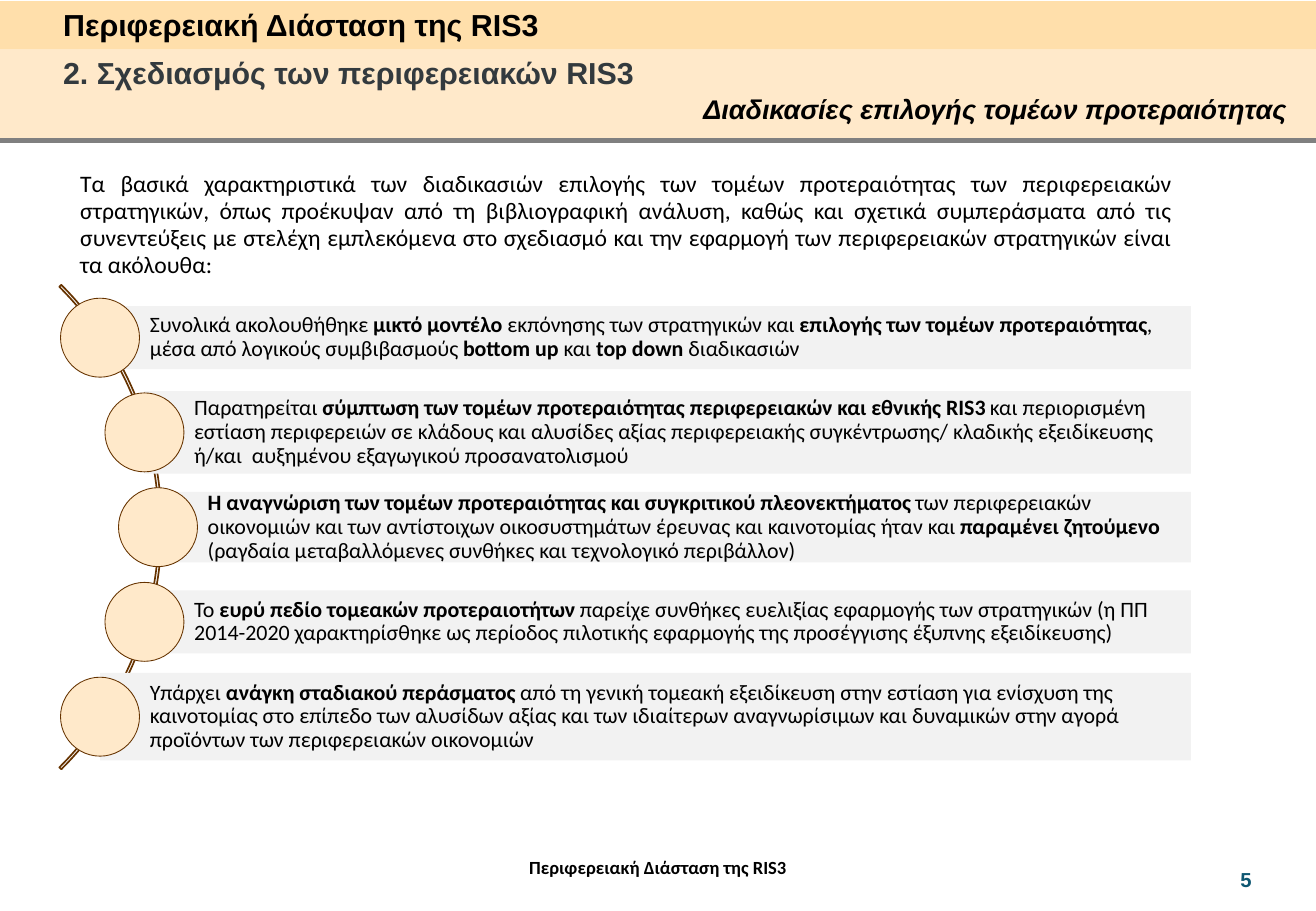
import math
from dataclasses import dataclass

import lxml.etree
import pptx
import pptx.dml.color
import pptx.enum.shapes
import pptx.enum.text
import pptx.oxml.ns
import pptx.util

Inches = pptx.util.Inches
SHAPE = pptx.enum.shapes.MSO_SHAPE
ALIGN = pptx.enum.text.PP_ALIGN
ANCHOR = pptx.enum.text.MSO_ANCHOR
qn = pptx.oxml.ns.qn

TITLE = "Περιφερειακή Διάσταση της RIS3"
SECTION = "2. Σχεδιασμός των περιφερειακών RIS3"
TOPIC = "Διαδικασίες επιλογής τομέων προτεραιότητας"
NUMBER = "5"
INTRO = (
    "Τα βασικά χαρακτηριστικά των διαδικασιών επιλογής των τομέων προτεραιότητας των "
    "περιφερειακών στρατηγικών, όπως προέκυψαν από τη βιβλιογραφική ανάλυση, καθώς και "
    "σχετικά συμπεράσματα από τις συνεντεύξεις με στελέχη εμπλεκόμενα στο σχεδιασμό και "
    "την εφαρμογή των περιφερειακών στρατηγικών είναι τα ακόλουθα:"
)
FINDINGS = [
    (0.52, "Συνολικά ακολουθήθηκε *μικτό μοντέλο* εκπόνησης των στρατηγικών και "
           "*επιλογής των τομέων προτεραιότητας*, μέσα από λογικούς συμβιβασμούς "
           "*bottom up *και *top down *διαδικασιών"),
    (0.68, "Παρατηρείται *σύμπτωση των τομέων προτεραιότητας περιφερειακών και εθνικής "
           "RIS3 *και περιορισμένη εστίαση περιφερειών σε κλάδους και αλυσίδες αξίας "
           "περιφερειακής συγκέντρωσης/ κλαδικής εξειδίκευσης ή/και  αυξημένου "
           "εξαγωγικού προσανατολισμού"),
    (0.58, "*Η αναγνώριση των τομέων προτεραιότητας και συγκριτικού πλεονεκτήματος *των "
           "περιφερειακών οικονομιών και των αντίστοιχων οικοσυστημάτων έρευνας και "
           "καινοτομίας ήταν και *παραμένει ζητούμενο *(ραγδαία μεταβαλλόμενες συνθήκες "
           "και τεχνολογικό περιβάλλον)"),
    (0.52, "Το *ευρύ πεδίο τομεακών προτεραιοτήτων *παρείχε συνθήκες ευελιξίας εφαρμογής "
           "των στρατηγικών (η ΠΠ 2014-2020 χαρακτηρίσθηκε ως περίοδος πιλοτικής "
           "εφαρμογής της προσέγγισης έξυπνης εξειδίκευσης)"),
    (0.72, "Υπάρχει *ανάγκη σταδιακού περάσματος *από τη γενική τομεακή εξειδίκευση στην "
           "εστίαση για ενίσχυση της καινοτομίας στο επίπεδο των αλυσίδων αξίας και των "
           "ιδιαίτερων αναγνωρίσιμων και δυναμικών στην αγορά προϊόντων των "
           "περιφερειακών οικονομιών"),
]


@dataclass(frozen=True)
class Theme:
    heading: str = "Arial"
    body: str = "Calibri"
    black: str = "000000"
    slate: str = "333A3E"
    teal: str = "0E5772"
    amber: str = "FFDFAB"
    cream: str = "FFE9CA"
    grey: str = "808080"
    pale: str = "F2F2F2"
    brown: str = "663300"
    title_size: int = 18
    topic_size: int = 16
    intro_size: int = 14
    finding_size: int = 13
    number_size: int = 12
    footer_size: int = 11


T = Theme()
WIDTH, HEIGHT = 10.83, 7.5
RULE_Y = 1.16
ARC_X, ARC_Y, ARC_RADIUS = -1.49, 4.34, 2.82
NODE_RADIUS, NODE_SIZE, NODE_STEP = 2.79, 0.65, 0.78
BAR_RIGHT = 9.8


def rgb(color):
    return pptx.dml.color.RGBColor.from_string(color)


def write(sp, text, size, font=T.heading, color=T.black, bold=False, italic=False,
          align=ALIGN.LEFT, spacing=None, anchor=ANCHOR.TOP,
          insets=(0.1, 0.05, 0.1, 0.05), wrap=True):
    tf = sp.text_frame
    tf.auto_size = pptx.enum.text.MSO_AUTO_SIZE.NONE
    tf.word_wrap = wrap
    tf.vertical_anchor = anchor
    tf.margin_left, tf.margin_top, tf.margin_right, tf.margin_bottom = map(Inches, insets)
    p = tf.paragraphs[0]
    p.alignment = align
    p.space_before = pptx.util.Pt(0)
    if spacing:
        p.line_spacing = spacing
    for i, phrase in enumerate(text.split("*")):
        if phrase:
            r = p.add_run()
            r.text = phrase
            r.font.name = font
            r.font.size = pptx.util.Pt(size)
            r.font.bold = bold or i % 2 == 1
            r.font.italic = italic
            r.font.color.rgb = rgb(color)
    return p


def place(s, sp, *box):
    sp.left, sp.top, sp.width, sp.height = map(Inches, box)
    s.shapes.element.append(sp.element)
    return sp


def add_box(s, *box):
    return s.shapes.add_textbox(*map(Inches, box))


def add_shape(s, kind, *box, fill=None, line=None, weight=1):
    sp = s.shapes.add_shape(kind, *map(Inches, box))
    sp.shadow.inherit = False
    if fill:
        sp.fill.solid()
        sp.fill.fore_color.rgb = rgb(fill)
    else:
        sp.fill.background()
    if line:
        sp.line.color.rgb = rgb(line)
        sp.line.width = pptx.util.Pt(weight)
    else:
        sp.line.fill.background()
    return sp


def add_header(s):
    add_shape(s, SHAPE.RECTANGLE, 0, 0.01, WIDTH, 0.4, fill=T.amber)
    add_shape(s, SHAPE.RECTANGLE, 0, 0.41, WIDTH, 0.75, fill=T.cream)
    rule = s.shapes.add_connector(pptx.enum.shapes.MSO_CONNECTOR.STRAIGHT,
                                  Inches(0), Inches(RULE_Y), Inches(WIDTH), Inches(RULE_Y))
    rule.line.color.rgb = rgb(T.grey)
    rule.line.width = pptx.util.Pt(3)
    lxml.etree.SubElement(rule.element.spPr, qn("a:effectLst"))
    title = place(s, s.shapes.title, 0.42, 0, 4.23, 0.4)
    write(title, TITLE, T.title_size, bold=True, wrap=False)
    write(add_box(s, 0.42, 0.4, 5.09, 0.4), SECTION, T.title_size, color=T.slate,
          bold=True, wrap=False)
    write(add_box(s, 5.69, 0.71, 5.09, 0.37), TOPIC, T.topic_size, bold=True, italic=True)


def add_intro(s):
    body = place(s, s.placeholders[1], 0.56, 1.35, 9.19, 1)
    p = write(body, INTRO, T.intro_size, font=T.body, align=ALIGN.JUSTIFY,
              spacing=pptx.util.Pt(16))
    pPr = p._p.get_or_add_pPr()
    pPr.set("marL", "0")
    pPr.set("indent", "0")
    lxml.etree.SubElement(pPr, qn("a:buNone"))


def add_findings(s):
    arc = add_shape(s, SHAPE.BLOCK_ARC, ARC_X - ARC_RADIUS, ARC_Y - ARC_RADIUS,
                    2 * ARC_RADIUS, 2 * ARC_RADIUS, line=T.brown)
    for i, value in enumerate((189, 27, 0.004)):
        arc.adjustments[i] = value
    for i, (height, text) in enumerate(FINDINGS):
        dy = (i - (len(FINDINGS) - 1) / 2) * NODE_STEP
        x = ARC_X + math.sqrt(NODE_RADIUS ** 2 - dy ** 2)
        y = ARC_Y + dy
        bar = add_shape(s, SHAPE.RECTANGLE, x, y - height / 2, BAR_RIGHT - x, height,
                        fill=T.pale)
        write(bar, text, T.finding_size, font=T.body, spacing=0.9, anchor=ANCHOR.MIDDLE,
              insets=(0.41, 0.04, 0.04, 0.04))
        add_shape(s, SHAPE.OVAL, x - NODE_SIZE / 2, y - NODE_SIZE / 2, NODE_SIZE, NODE_SIZE,
                  fill=T.cream, line=T.brown, weight=0.5)


def add_footer(s):
    write(add_box(s, 2.82, 7.05, 5.19, 0.38), TITLE, T.footer_size, font=T.body, bold=True,
          align=ALIGN.CENTER, insets=(0, 0, 0, 0))
    p = write(add_box(s, 10.11, 7.09, 0.52, 0.3), NUMBER, T.number_size, color=T.teal,
              bold=True)
    r = p.runs[0]._r
    r.tag = qn("a:fld")
    r.set("id", "{B6F15528-21DE-4FAA-801E-634DDDAF4B2B}")
    r.set("type", "slidenum")


def main():
    prs = pptx.Presentation()
    prs.slide_width, prs.slide_height = Inches(WIDTH), Inches(HEIGHT)
    prs.element.set("firstSlideNum", NUMBER)
    s = prs.slides.add_slide(prs.slide_layouts[1])
    add_header(s)
    add_findings(s)
    add_intro(s)
    add_footer(s)
    prs.save("out.pptx")


if __name__ == "__main__":
    main()
